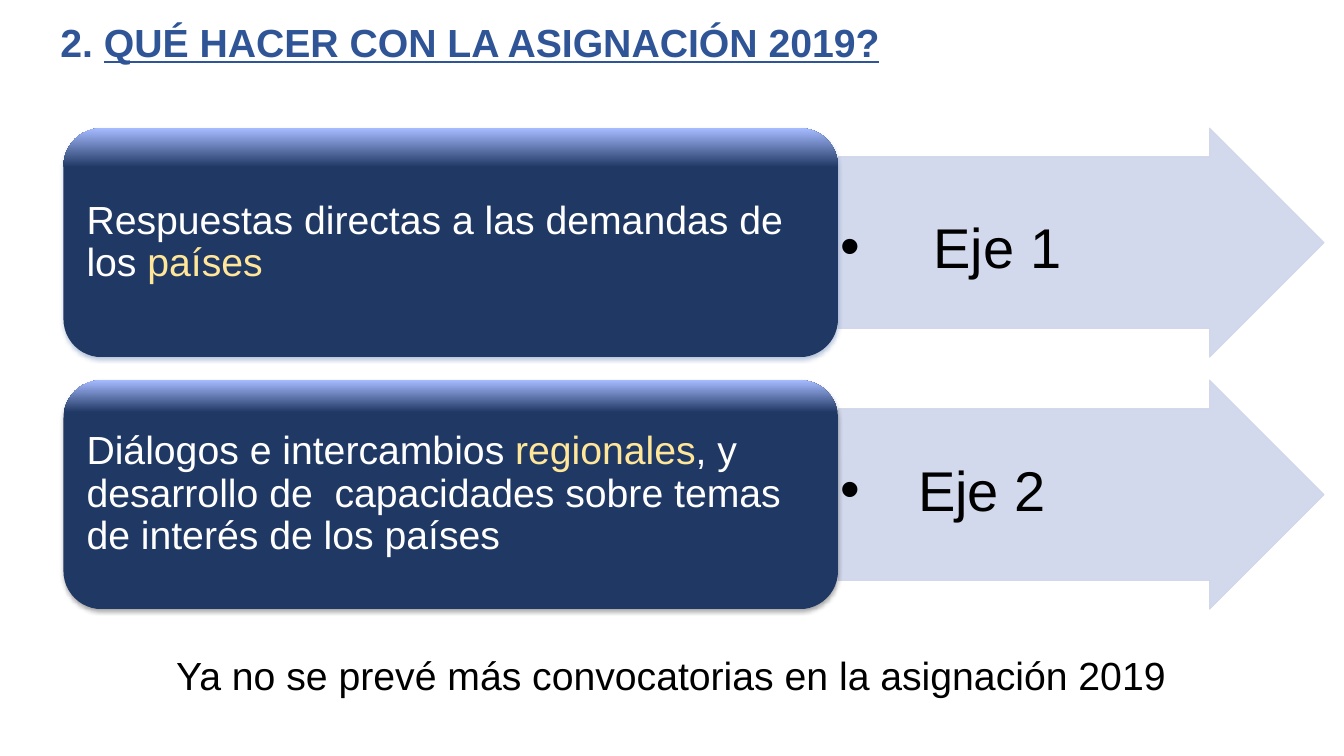
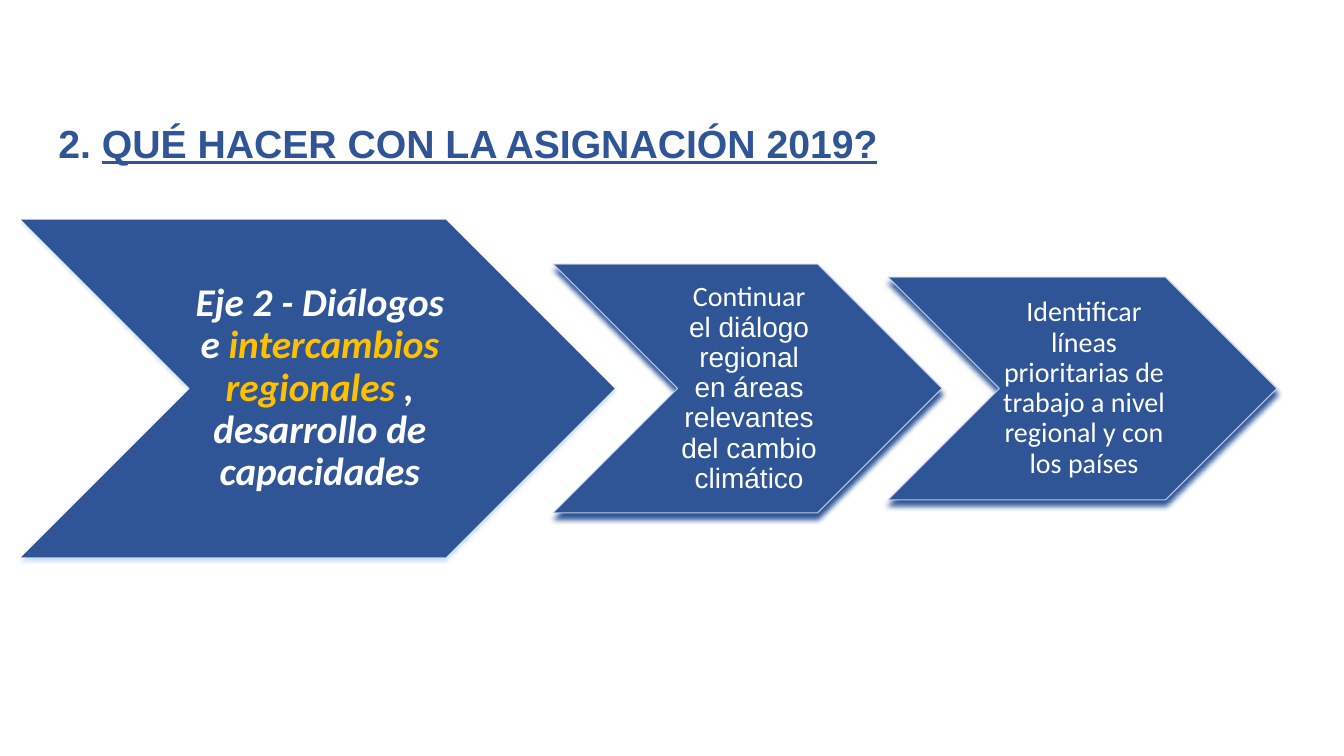
from lxml.etree import SubElement
from pptx import Presentation
from pptx.dml.color import RGBColor
from pptx.enum.shapes import MSO_SHAPE as Preset
from pptx.enum.text import MSO_ANCHOR as Anchor, MSO_AUTO_SIZE as AutoSize, PP_ALIGN as Align
from pptx.oxml.ns import qn
from pptx.util import Cm, Pt

BLUE = RGBColor(0x2F, 0x55, 0x97)
NAVY = RGBColor(0x20, 0x38, 0x64)
GLOW = RGBColor(0xA6, 0xBB, 0xFF)
PALE = RGBColor(0xCF, 0xD5, 0xEA)
SKY = RGBColor(0x5B, 0x9B, 0xD5)
CREAM = RGBColor(0xFF, 0xE6, 0x99)
GOLD = RGBColor(0xFF, 0xC0, 0x00)
WHITE = RGBColor(0xFF, 0xFF, 0xFF)
BLACK = RGBColor(0x00, 0x00, 0x00)

TITLE = {"name": "Arial", "size": Pt(28), "bold": True, "color": BLUE}
BODY = {"name": "Arial", "size": Pt(28), "color": WHITE}
NOTE = {"name": "Arial", "size": Pt(28), "color": BLACK}
AXIS = {"name": "Arial", "size": Pt(40), "color": BLACK}
LEAD = {"name": "Calibri", "size": Pt(28), "bold": True, "italic": True, "color": WHITE}
STEP = {"name": "Calibri", "size": Pt(20), "color": WHITE}

SOFT_SHADOW = {"opacity": 35, "blur": 3.1, "distance": 1.8}
FULL_SHADOW = {"opacity": 100, "blur": 4, "distance": 4}


def set_frame(shape, insets, anchor):
    frame = shape.text_frame
    left, top, right, bottom = (Cm(inset) for inset in insets)
    values = {
        "word_wrap": True, "auto_size": AutoSize.NONE, "vertical_anchor": anchor,
        "margin_left": left, "margin_top": top,
        "margin_right": right, "margin_bottom": bottom,
    }
    for name, value in values.items():
        setattr(frame, name, value)
    return frame.paragraphs[0]


def write(para, spans, base, align=Align.LEFT, spacing=1.0):
    para.alignment = align
    para.line_spacing = spacing
    for text, changes in spans:
        span = para.add_run()
        span.text = text
        for name, value in {**base, **changes}.items():
            if name == "color":
                span.font.color.rgb = value
            else:
                setattr(span.font, name, value)


def set_opacity(parent, percent):
    for color in list(parent.iter(qn("a:srgbClr"))):
        SubElement(color, qn("a:alpha"), val=str(percent * 1000))


def add_preset(slide, preset, box):
    shape = slide.shapes.add_shape(preset, *(Cm(length) for length in box))
    shape.shadow.inherit = False
    shape.line.fill.background()
    return shape


def fill_solid(shape, color):
    shape.fill.solid()
    shape.fill.fore_color.rgb = color


def outline(shape):
    shape.line.color.rgb = PALE
    shape.line.width = Pt(0.75)
    set_opacity(shape.line.fill._xPr, 90)


def add_shadow(shape, color, opacity, blur, distance):
    effects = shape._element.spPr.find(qn("a:effectLst"))
    shadow = SubElement(
        effects, qn("a:outerShdw"), blurRad=str(Pt(blur)), dist=str(Pt(distance)),
        dir="5400000", algn="ctr", rotWithShape="0")
    SubElement(shadow, qn("a:srgbClr"), val=str(color))
    set_opacity(shadow, opacity)


def add_bullet(para, indent):
    props = para._p.get_or_add_pPr()
    props.set("marL", str(Cm(indent)))
    props.set("indent", str(-Cm(indent)))
    SubElement(SubElement(props, qn("a:buClr")), qn("a:srgbClr"), val=str(BLACK))
    SubElement(props, qn("a:buFont"), typeface="Arial")
    SubElement(props, qn("a:buChar"), char="•")


def add_titled_slide(deck, left, top):
    slide = deck.slides.add_slide(deck.slide_layouts[5])
    title = slide.shapes.title
    place = {"left": left, "top": top, "width": 30.33, "height": 1.45}
    for name, value in place.items():
        setattr(title, name, Cm(value))
    para = set_frame(title, (0.25, 0.13, 0.25, 0.13), Anchor.TOP)
    write(para, [("2. ", {}), ("QUÉ HACER CON LA ASIGNACIÓN 2019?", {"underline": True})], TITLE)
    return slide


def add_axis_row(slide, box, axis, indent, drop, spans, shade, shadow):
    left, top, width, height = box
    card_width = 19.52

    arrow_box = (left + card_width, top, width - card_width, height)
    arrow = add_preset(slide, Preset.RIGHT_ARROW, arrow_box)
    arrow.adjustments[0] = 0.75
    fill_solid(arrow, PALE)
    set_opacity(arrow._element.spPr, 90)
    outline(arrow)
    para = set_frame(arrow, (0.05, drop, 0.05, 0), Anchor.TOP)
    add_bullet(para, indent)
    write(para, [(axis, {})], AXIS)

    card = add_preset(slide, Preset.ROUNDED_RECTANGLE, (left, top, card_width, height))
    card.fill.gradient()
    card.fill.gradient_angle = 90
    for stop, color, position in zip(card.fill.gradient_stops, (NAVY, GLOW), (shade, 1)):
        stop.color.rgb = color
        stop.position = position
    add_shadow(card, shadow, **SOFT_SHADOW)
    write(set_frame(card, (0.3, 0.15, 0.3, 0.15), Anchor.MIDDLE), spans, BODY, spacing=0.9)


def add_note(slide, box, text):
    note = slide.shapes.add_textbox(*(Cm(length) for length in box))
    para = set_frame(note, (0.25, 0.13, 0.25, 0.13), Anchor.TOP)
    write(para, [(text, {})], NOTE, Align.JUSTIFY)


def add_chevron(slide, box, insets, spans, base, shadow, shadow_format, outlined):
    chevron = add_preset(slide, Preset.CHEVRON, box)
    fill_solid(chevron, BLUE)
    if outlined:
        outline(chevron)
    add_shadow(chevron, shadow, **shadow_format)
    write(set_frame(chevron, insets, Anchor.MIDDLE), spans, base, Align.CENTER, 0.9)


def build_axes(deck):
    slide = add_titled_slide(deck, 1.27, 0.33)
    rows = [
        ("Eje 1", 2.36, 1.4, [
            ("Respuestas directas a las demandas de los ", {}),
            ("países", {"color": CREAM}),
        ], 0.83, BLUE),
        ("Eje 2", 1.97, 1.17, [
            ("Diálogos e intercambios ", {}),
            ("regionales", {"color": CREAM}),
            (", y desarrollo de  capacidades sobre temas de interés de los países", {}),
        ], 0.86, BLACK),
    ]
    for index, row in enumerate(rows):
        add_axis_row(slide, (1.6, 3.23 + index * 6.35, 31.77, 5.77), *row)
    add_note(slide, (4.19, 16.28, 26.59, 1.45),
             "Ya no se prevé más convocatorias en la asignación 2019")


def build_steps(deck):
    slide = add_titled_slide(deck, 1.22, 2.87)
    middle = 9.79
    lead_insets = (0.1, 0.05, 0, 0.05)
    step_insets = (0.08, 0.03, 0, 0.03)
    steps = [
        (0.53, 14.96, 8.51, lead_insets, [
            ("Eje 2 - Diálogos e ", {}),
            ("intercambios regionales ", {"color": GOLD}),
            (", desarrollo de capacidades", {}),
        ], LEAD, SKY, SOFT_SHADOW, False),
        (13.94, 9.8, 6.27, step_insets, [
            ("Continuar ", {}),
            ("el diálogo regional en áreas relevantes del cambio climático", {"name": "Arial"}),
        ], STEP, BLUE, FULL_SHADOW, True),
        (22.38, 9.8, 5.61, step_insets, [
            ("Identificar líneas prioritarias de trabajo a nivel regional y con los países", {}),
        ], STEP, BLUE, FULL_SHADOW, True),
    ]
    for left, width, height, *content in steps:
        add_chevron(slide, (left, middle - height / 2, width, height), *content)


def main():
    deck = Presentation()
    deck.slide_width = Cm(33.87)
    deck.slide_height = Cm(19.05)
    build_axes(deck)
    build_steps(deck)
    deck.save("out.pptx")


if __name__ == "__main__":
    main()
